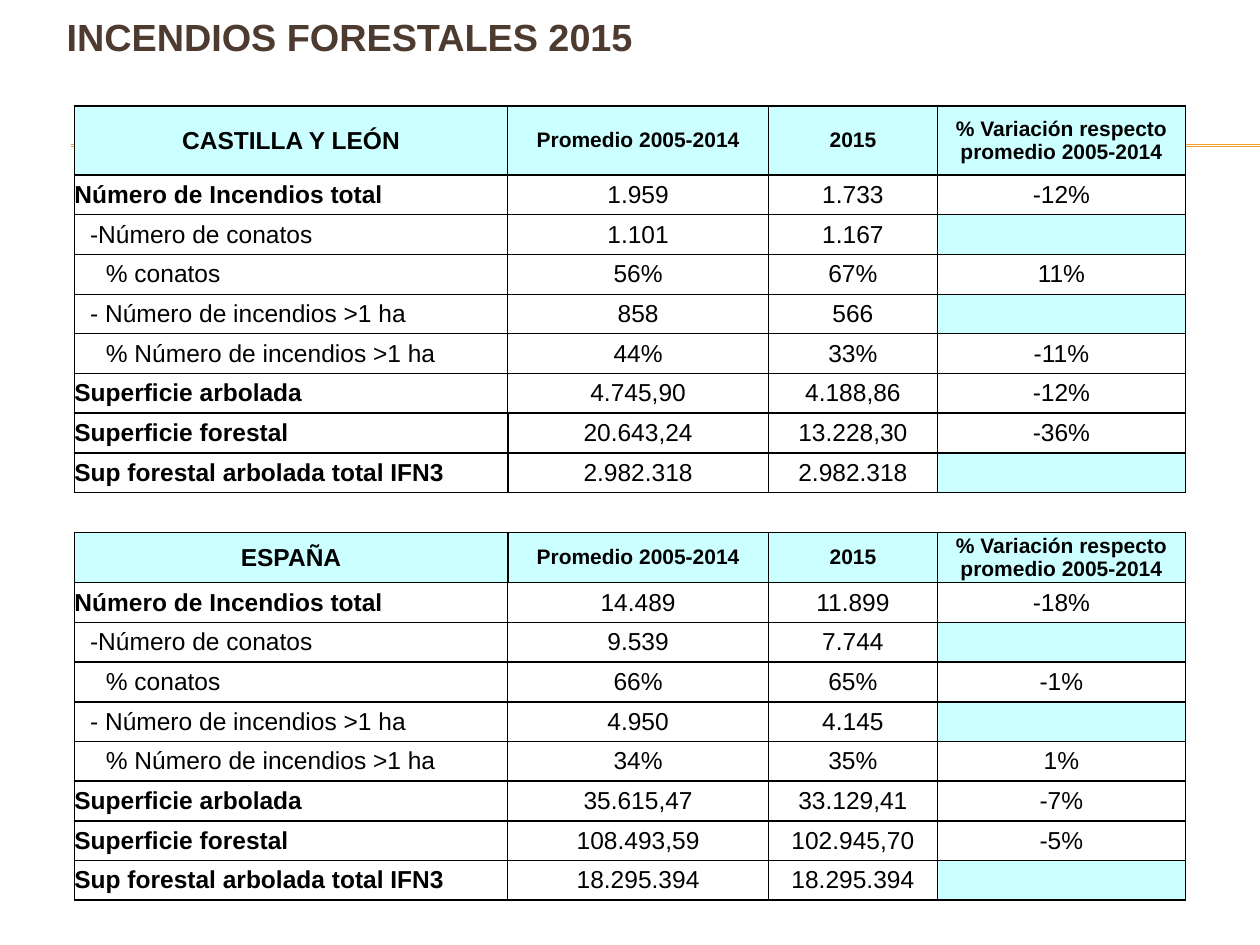
from lxml import etree
from pptx import Presentation, util as u
from pptx.dml.color import RGBColor
from pptx.enum import shapes, text
from pptx.oxml.ns import qn

COLORS = {"title": "4E3B30", "rule": "F0A22E", "ink": "000000", "shade": "CCFFFF"}
COLUMNS = (34.4, 20.7, 13.4, 19.7)
HEADINGS = ("Promedio 2005-2014", "2015", "% Variación respecto promedio 2005-2014")
LABELS = (
    (0, "Número de Incendios total"),
    (1, "-Número de conatos"),
    (2, "% conatos"),
    (1, "- Número de incendios >1 ha"),
    (2, "% Número de incendios >1 ha"),
    (0, "Superficie arbolada"),
    (0, "Superficie forestal"),
    (0, "Sup forestal arbolada total IFN3"),
)
REGIONS = {
    "CASTILLA Y LEÓN": (
        ("1.959", "1.733", "-12%"),
        ("1.101", "1.167", ""),
        ("56%", "67%", "11%"),
        ("858", "566", ""),
        ("44%", "33%", "-11%"),
        ("4.745,90", "4.188,86", "-12%"),
        ("20.643,24", "13.228,30", "-36%"),
        ("2.982.318", "2.982.318", ""),
    ),
    "ESPAÑA": (
        ("14.489", "11.899", "-18%"),
        ("9.539", "7.744", ""),
        ("66%", "65%", "-1%"),
        ("4.950", "4.145", ""),
        ("34%", "35%", "1%"),
        ("35.615,47", "33.129,41", "-7%"),
        ("108.493,59", "102.945,70", "-5%"),
        ("18.295.394", "18.295.394", ""),
    ),
}


class Deck:
    """Draws styled elements on one slide, with lengths in percent of its size."""

    font = "Arial"

    def __init__(self, width, height):
        self.prs = Presentation()
        self.prs.slide_width, self.prs.slide_height = u.Inches(width), u.Inches(height)
        self.s = self.prs.slides.add_slide(self.prs.slide_layouts[6])

    def x(self, share):
        return round(self.prs.slide_width * share / 100)

    def y(self, share):
        return round(self.prs.slide_height * share / 100)

    def run(self, p, words, size, color, bold=False):
        r = p.add_run()
        r.text = words
        r.font.name, r.font.size, r.font.bold = self.font, u.Pt(size), bold
        r.font.color.rgb = RGBColor.from_string(COLORS[color])

    def rule(self, left, right, top):
        sp = self.s.shapes.add_connector(
            shapes.MSO_CONNECTOR.STRAIGHT, self.x(left), self.y(top), self.x(right), self.y(top))
        sp.line.color.rgb = RGBColor.from_string(COLORS["rule"])
        sp.line.width = u.Pt(0.75)
        etree.SubElement(sp._element.spPr, qn("a:effectLst"))

    def title(self, words, left, top, width, height):
        sp = self.s.shapes.add_textbox(self.x(left), self.y(top), self.x(width), self.y(height))
        tf = sp.text_frame
        tf.word_wrap = True
        tf.vertical_anchor = text.MSO_ANCHOR.MIDDLE
        p = tf.paragraphs[0]
        self.run(p, words, 21.6, "title", True)
        p.add_line_break()
        p.font.size = u.Pt(21.6)

    def table(self, left, top, columns, rows):
        frame = self.s.shapes.add_table(
            len(rows), len(columns), self.x(left), self.y(top),
            self.x(sum(columns)), self.y(sum(rows)))
        tb = frame.table
        tb.first_row = tb.horz_banding = False
        for col, width in zip(tb.columns, columns):
            col.width = self.x(width)
        for row, height in zip(tb.rows, rows):
            row.height = self.y(height)
        return tb

    def cell(self, cell, words, borders, size=14, bold=False, level=0, centred=True, shaded=False):
        cell.margin_right = cell.margin_top = cell.margin_bottom = 0
        cell.margin_left = self.x(1.25 * level)
        cell.vertical_anchor = text.MSO_ANCHOR.MIDDLE
        self.borders(cell, borders)
        if shaded:
            cell.fill.solid()
            cell.fill.fore_color.rgb = RGBColor.from_string(COLORS["shade"])
        else:
            cell.fill.background()
        p = cell.text_frame.paragraphs[0]
        p.alignment = text.PP_ALIGN.CENTER if centred else text.PP_ALIGN.LEFT
        if words:
            self.run(p, words, size, "ink", bold)
        else:
            p.font.size = u.Pt(size)

    def borders(self, cell, widths):
        tcPr = cell._tc.get_or_add_tcPr()
        for side, width in zip("LRTB", widths):
            ln = etree.SubElement(tcPr, qn(f"a:ln{side}"), w=str(u.Pt(width)))
            if width:
                fill = etree.SubElement(ln, qn("a:solidFill"))
                etree.SubElement(fill, qn("a:srgbClr"), val=COLORS["ink"])
            else:
                etree.SubElement(ln, qn("a:noFill"))


def border_widths(row, col):
    if row == 9:
        return 0, 0, 1, 1
    inner = 1 if 7 <= row <= 10 else 0.5
    return (1 if col == 0 else inner, 1 if col == 3 else inner,
            0.5 if 2 <= row <= 5 else 1, 0.5 if 1 <= row <= 4 else 1)


def main():
    deck = Deck(10, 7.5)
    for top in (15.33, 15.47):
        deck.rule(5.6, 100, top)
    deck.title("INCENDIOS FORESTALES 2015", 4.3, 2.8, 91.5, 6.8)
    tb = deck.table(5.9, 11.2, COLUMNS, [7.33] + [4.2] * 9 + [4.97] + [4.2] * 8)
    for col in range(4):
        deck.cell(tb.cell(9, col), "", border_widths(9, col))
    for start, (region, data) in zip((0, 10), REGIONS.items()):
        for col, words in enumerate((region, *HEADINGS)):
            deck.cell(tb.cell(start, col), words, border_widths(start, col),
                      size=12 if col else 14, bold=True, shaded=True)
        for row, ((level, label), values) in enumerate(zip(LABELS, data), start + 1):
            deck.cell(tb.cell(row, 0), label, border_widths(row, 0),
                      bold=level == 0, level=level, centred=False)
            for col, value in enumerate(values, 1):
                deck.cell(tb.cell(row, col), value, border_widths(row, col), shaded=not value)
    deck.prs.save("out.pptx")


if __name__ == "__main__":
    main()
